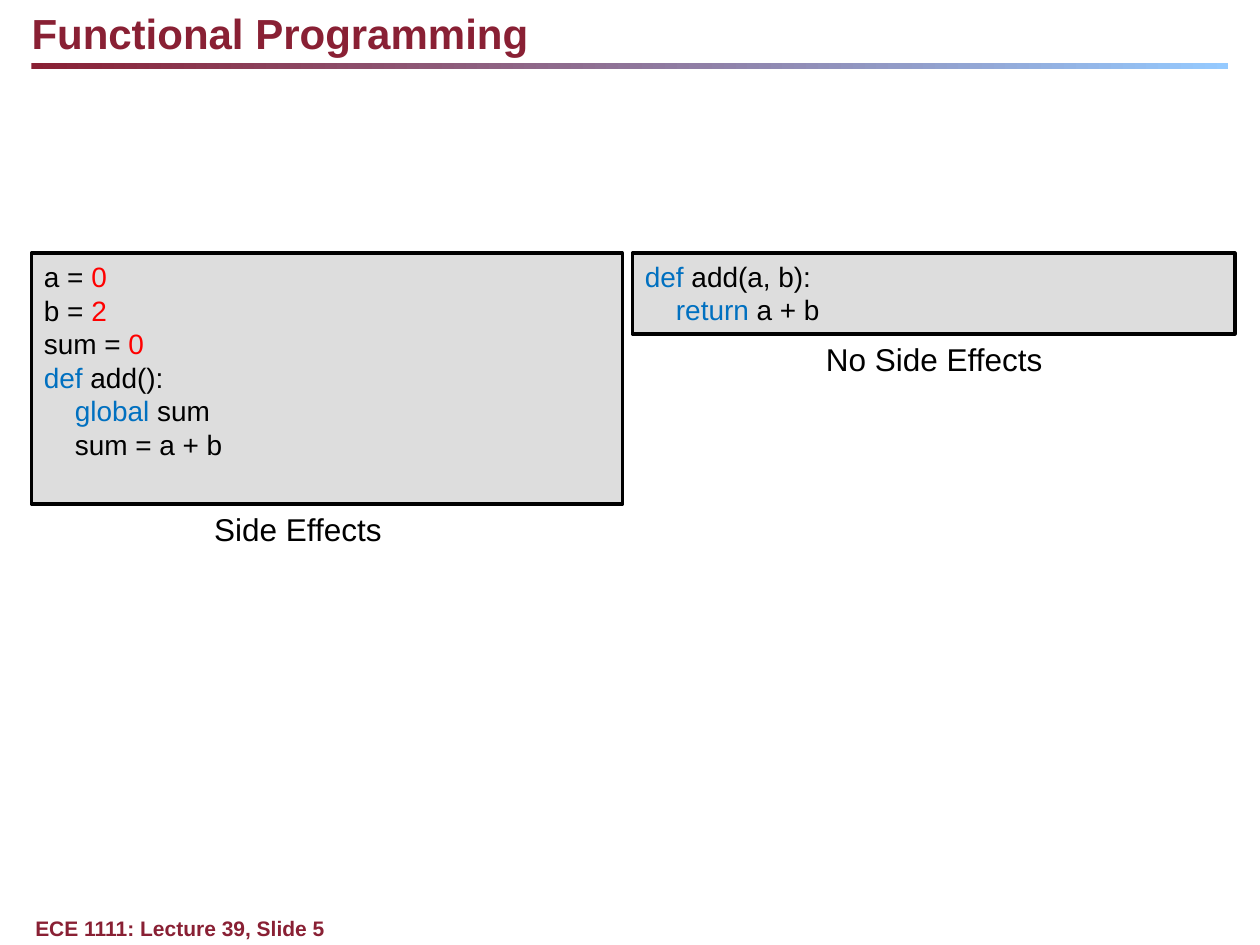
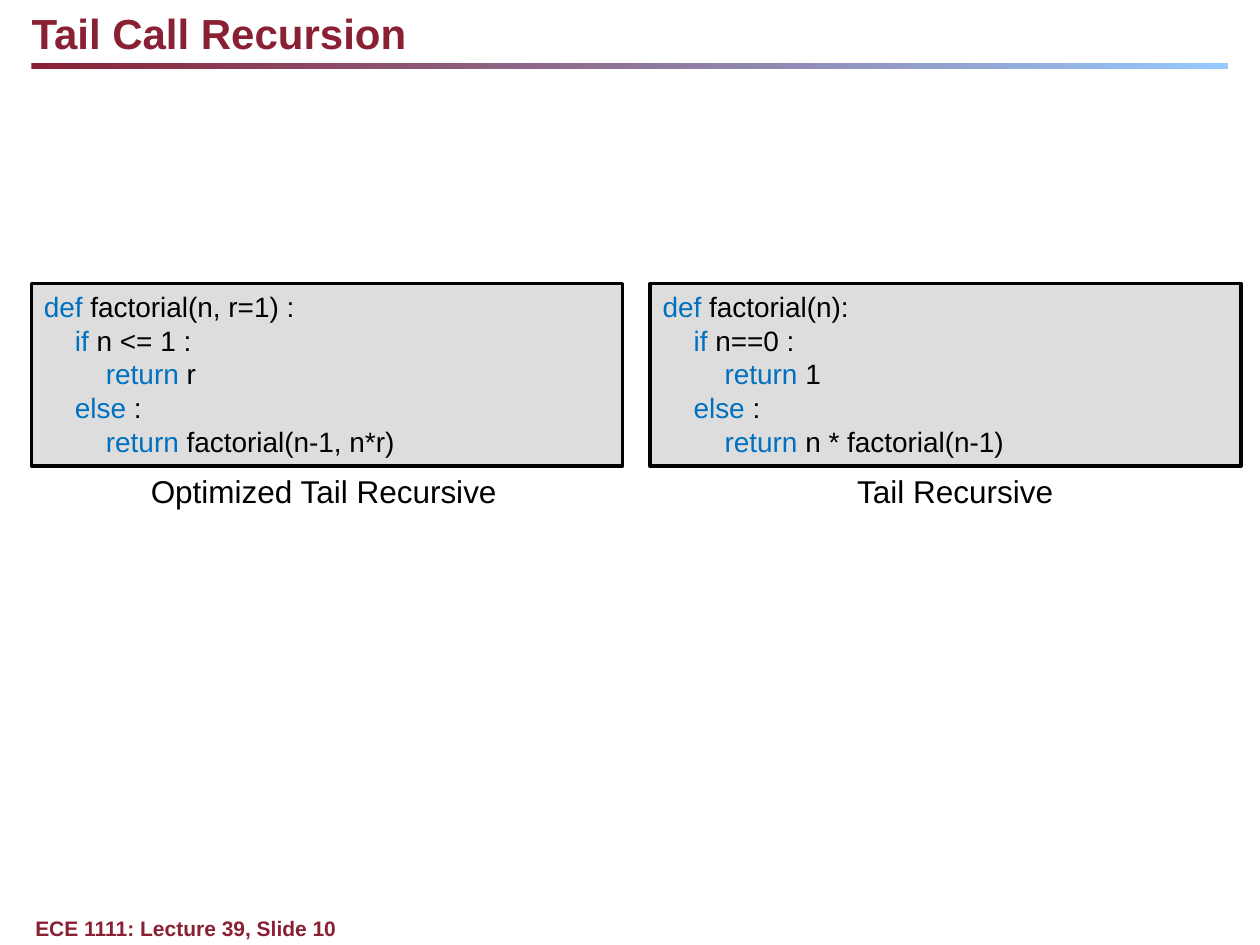
from pptx import Presentation
from pptx.dml.color import RGBColor
from pptx.enum.shapes import MSO_SHAPE
from pptx.enum.text import MSO_ANCHOR, PP_ALIGN
from pptx.util import Pt

# Shared style: 100 px to the inch
EMU_PER_PX = 9144
FONT = "Arial"
MAROON, SKY, GREY = "892034", "95CAFF", "DDDDDD"
BLACK, BLUE, RED = "000000", "0070C0", "FF0000"
TITLE_ONLY = 5
CODE_LEFT, CODE_WIDTH = 25, 469
CAPTION_HEIGHT = 40
WORD_COLORS = {
    "def": BLUE, "global": BLUE, "return": BLUE, "if": BLUE, "else": BLUE,
    "0": RED, "2": RED,
}

# Code listings
SIDE_EFFECTS = """a = 0
b = 2
sum = 0
def add():
    global sum
    sum = a + b"""
NO_SIDE_EFFECTS = """def add(a, b):
    return a + b"""
OPTIMIZED_TAIL = """def factorial(n, r=1) :
    if n <= 1 :
        return r
    else :
        return factorial(n-1, n*r)"""
TAIL = """def factorial(n):
    if n==0 :
        return 1
    else :
        return n * factorial(n-1)"""


def px(*lengths):
    return [length * EMU_PER_PX for length in lengths]


def rgb(color):
    return RGBColor.from_string(color)


def style_font(font, size, color, bold=False):
    font.name, font.size, font.bold = FONT, Pt(size), bold
    font.color.rgb = rgb(color)


def write_line(shape, text, size, color, bold=False, align=PP_ALIGN.LEFT, inset=True):
    """Put one styled line of text at the top of a shape."""
    frame = shape.text_frame
    frame.word_wrap = True
    frame.vertical_anchor = MSO_ANCHOR.TOP
    if not inset:
        frame.margin_left = frame.margin_right = 0
        frame.margin_top = frame.margin_bottom = 0
    frame.text = text
    paragraph = frame.paragraphs[0]
    paragraph.alignment = align
    style_font(paragraph.runs[0].font, size, color, bold)


def add_rectangle(slide, left, top, width, height):
    shape = slide.shapes.add_shape(MSO_SHAPE.RECTANGLE, *px(left, top, width, height))
    shape.shadow.inherit = False
    return shape


def add_base_slide(presentation, title, number):
    """Add a slide with its title, gradient rule and footer."""
    slide = presentation.slides.add_slide(presentation.slide_layouts[TITLE_ONLY])

    rule = add_rectangle(slide, 25, 50, 950, 5)
    rule.line.fill.background()
    rule.fill.gradient()
    rule.fill.gradient_angle = 0
    for stop, color in zip(rule.fill.gradient_stops, (MAROON, SKY)):
        stop.color.rgb = rgb(color)

    heading = slide.shapes.title
    heading.left, heading.top, heading.width, heading.height = px(25, 6, 750, 40)
    write_line(heading, title, 24, MAROON, bold=True, inset=False)

    footer = slide.shapes.add_textbox(*px(28, 727, 892, 20))
    write_line(footer, f"ECE 1111: Lecture 39, Slide {number}", 12, MAROON,
               bold=True, inset=False)
    return slide


def write_code_line(paragraph, line):
    """Write a line of code, colouring its keyword or number."""
    word = next((word for word in line.split() if word in WORD_COLORS), None)
    before, colored, after = line.partition(word) if word else (line, "", "")
    for text, color in ((before, BLACK), (colored, WORD_COLORS.get(word)), (after, BLACK)):
        if text:
            run = paragraph.add_run()
            run.text = text
            style_font(run.font, 16, color)


def add_code_box(slide, code, left, top, width, height):
    box = add_rectangle(slide, left, top, width, height)
    box.fill.solid()
    box.fill.fore_color.rgb = rgb(GREY)
    box.line.color.rgb = rgb(BLACK)
    box.line.width = Pt(2)
    frame = box.text_frame
    frame.word_wrap = True
    frame.vertical_anchor = MSO_ANCHOR.TOP
    for index, line in enumerate(code.split("\n")):
        paragraph = frame.add_paragraph() if index else frame.paragraphs[0]
        paragraph.alignment = PP_ALIGN.LEFT
        write_code_line(paragraph, line)


def add_caption(slide, text, left, top, width):
    caption = slide.shapes.add_textbox(*px(left, top, width, CAPTION_HEIGHT))
    write_line(caption, text, 18, BLACK, align=PP_ALIGN.CENTER)


def add_example(slide, code, box, caption, caption_left, caption_width):
    """Add a code box with its caption right below."""
    left, top, width, height = box
    add_code_box(slide, code, left, top, width, height)
    add_caption(slide, caption, caption_left, top + height, caption_width)


def main():
    presentation = Presentation()
    presentation.slide_width, presentation.slide_height = px(1000, 750)

    # Functional programming
    slide = add_base_slide(presentation, "Functional Programming", 5)
    add_example(slide, SIDE_EFFECTS, (CODE_LEFT, 201, CODE_WIDTH, 199),
                "Side Effects", 140, 193)
    add_example(slide, NO_SIDE_EFFECTS, (502, 201, 478, 64),
                "No Side Effects", 643, 197)

    # Tail call recursion
    slide = add_base_slide(presentation, "Tail Call Recursion", 10)
    add_example(slide, OPTIMIZED_TAIL, (CODE_LEFT, 225, CODE_WIDTH, 145),
                "Optimized Tail Recursive", 95, 324)
    add_example(slide, TAIL, (516, 225, CODE_WIDTH, 145),
                "Tail Recursive", 617, 282)

    presentation.save("out.pptx")


if __name__ == "__main__":
    main()
